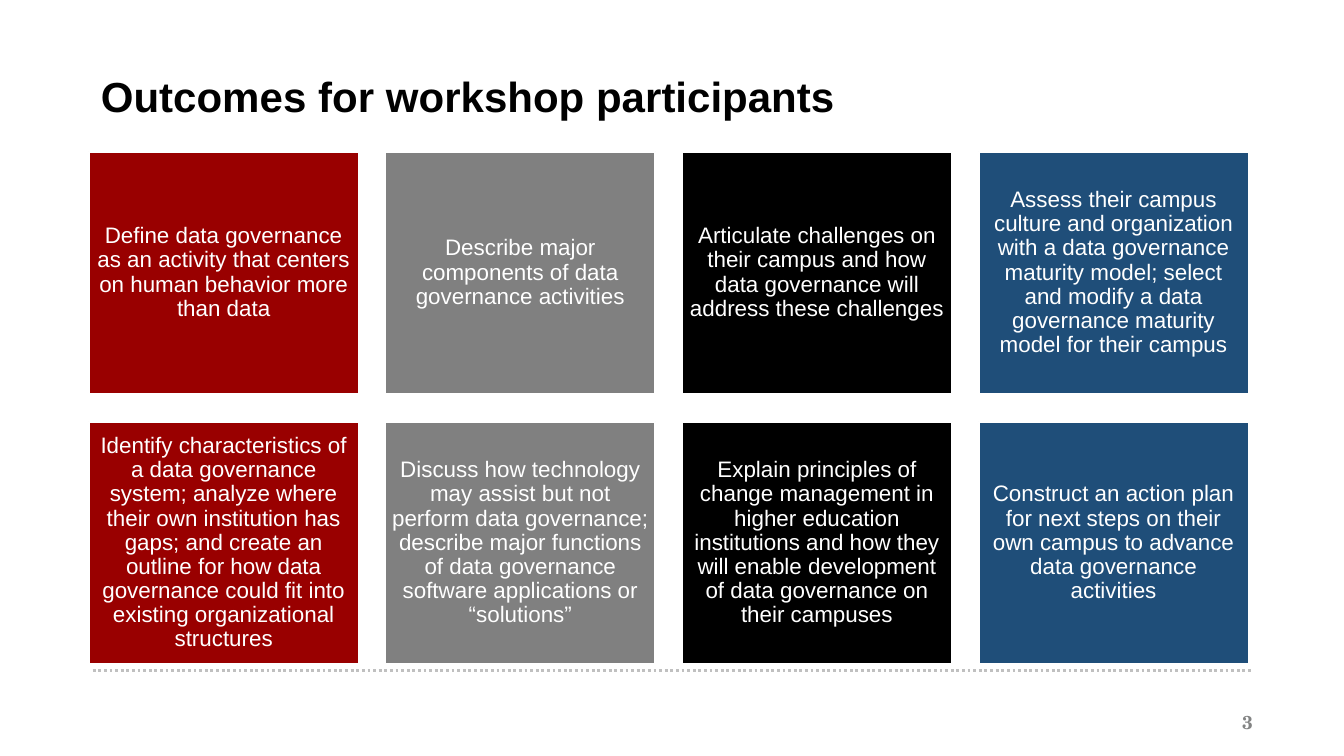
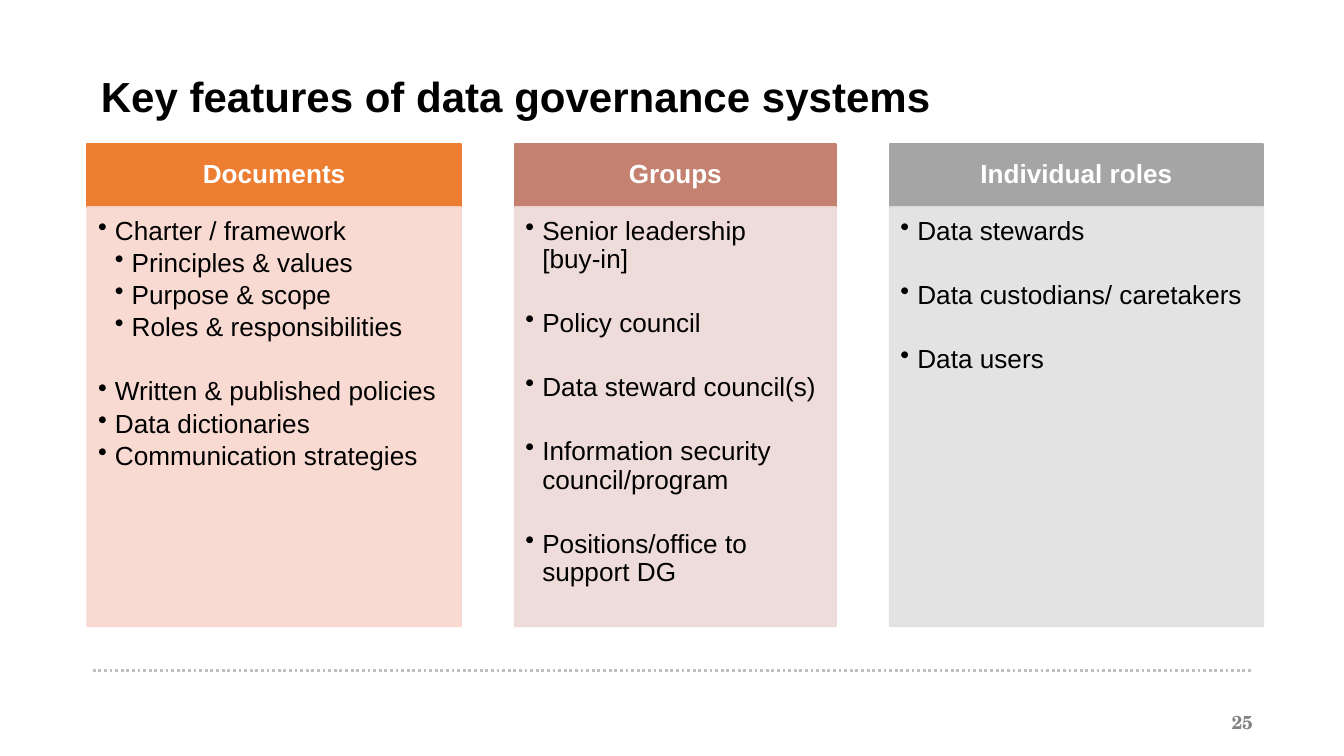
from copy import deepcopy

from lxml import etree
from pptx import Presentation
from pptx import util as u
from pptx.dml.color import RGBColor
from pptx.enum import dml, shapes, text
from pptx.oxml.ns import qn

UNIT = u.Inches(0.1)  # one column or row of the page grid
PAGE_COLUMNS, PAGE_ROWS = 100, 56.25
LEFT = 6.5
SANS, SERIF = "Arial", "TeX Gyre Schola"
BLACK, WHITE, RULE, NUMBER = "000000", "FFFFFF", "C0C0C0", "828383"
TILE_COLORS = ["990000", "808080", "000000", "1F4E79"]
LIST_SPACE = 2.1
LIST_GAP = 19.2
INDENT = 0.125

OUTCOMES = [
    ["Define data governance as an activity that centers on human behavior more than data",
     "Describe major components of data governance activities",
     "Articulate challenges on their campus and how data governance will address these challenges",
     "Assess their campus culture and organization with a data governance maturity model; "
     "select and modify a data governance maturity model for their campus"],
    ["Identify characteristics of a data governance system; analyze where their own institution "
     "has gaps; and create an outline for how data governance could fit into existing "
     "organizational structures",
     "Discuss how technology may assist but not perform data governance; describe major "
     "functions of data governance software applications or “solutions”",
     "Explain principles of change management in higher education institutions and how they "
     "will enable development of data governance on their campuses",
     "Construct an action plan for next steps on their own campus to advance data governance "
     "activities"],
]

# Each feature: heading, width, heading colour, body colour, groups of (level, text)
FEATURES = [
    ("Documents", 27.8, "ED7D31", "F8D7CE", [
        [(1, "Charter / framework"), (2, "Principles & values"),
         (2, "Purpose & scope"), (2, "Roles & responsibilities")],
        [(1, "Written & published policies"), (1, "Data dictionaries"),
         (1, "Communication strategies")]]),
    ("Groups", 23.9, "C48170", "EDD9D7", [
        [(1, "Senior leadership\n[buy-in]")], [(1, "Policy council")],
        [(1, "Data steward council(s)")], [(1, "Information security council/program")],
        [(1, "Positions/office to support DG")]]),
    ("Individual roles", 27.8, "A5A5A5", "E1E1E1", [
        [(1, "Data stewards")], [(1, "Data custodians/ caretakers")], [(1, "Data users")]]),
]


def color(hex_string):
    return RGBColor.from_string(hex_string)


def grid(*lengths):
    return [round(length * UNIT) for length in lengths]


def write(paragraph, content, size=14, font=SANS, fill=BLACK, bold=False,
          align=text.PP_ALIGN.LEFT, spacing=0.9, after=0):
    """Fill a paragraph; line breaks in the content take the same format as its runs."""
    paragraph.text = content
    paragraph.alignment = align
    paragraph.line_spacing = spacing
    paragraph.space_before = u.Pt(0)
    paragraph.space_after = u.Pt(after)
    for run in paragraph.runs:
        run.font.size = u.Pt(size)
        run.font.name = font
        run.font.bold = bold
        run.font.color.rgb = color(fill)
    for line_break in paragraph._p.findall(qn("a:br")):
        line_break.append(deepcopy(paragraph.runs[0]._r.find(qn("a:rPr"))))


def set_frame(shape, anchor, insets=(0.1, 0.05, 0.1, 0.05)):
    frame = shape.text_frame
    frame.word_wrap = True
    frame.auto_size = text.MSO_AUTO_SIZE.NONE
    frame.vertical_anchor = anchor
    (frame.margin_left, frame.margin_top,
     frame.margin_right, frame.margin_bottom) = map(u.Inches, insets)
    return frame


def add_block(slide, place, fill, line, opacity=100):
    shape = slide.shapes.add_shape(shapes.MSO_SHAPE.RECTANGLE, *grid(*place))
    shape.shadow.inherit = False
    shape.fill.solid()
    shape.fill.fore_color.rgb = color(fill)
    shape.line.color.rgb = color(line)
    shape.line.width = u.Pt(1)
    if opacity < 100:
        for value in shape._element.spPr.iter(qn("a:srgbClr")):
            etree.SubElement(value, qn("a:alpha"), val=str(opacity * 1000))
    return shape


def add_label(slide, place, content, fill, line, insets, **style):
    shape = add_block(slide, place, fill, line)
    frame = set_frame(shape, text.MSO_ANCHOR.MIDDLE, insets)
    write(frame.paragraphs[0], content, fill=WHITE, align=text.PP_ALIGN.CENTER, **style)


def set_bullet(paragraph, level):
    paragraph.level = level
    properties = paragraph._p.get_or_add_pPr()
    properties.set("marL", str(u.Inches(INDENT * level)))
    properties.set("indent", str(-u.Inches(INDENT)))
    etree.SubElement(properties, qn("a:buChar"), char="•")


def add_list(slide, place, groups, fill):
    shape = add_block(slide, place, fill, fill, opacity=90)
    frame = set_frame(shape, text.MSO_ANCHOR.TOP, (0.08, 0.08, 0.11, 0.12))
    paragraph = frame.paragraphs[0]
    for group_index, group in enumerate(groups):
        for index, (level, content) in enumerate(group):
            if group_index or index:
                paragraph = frame.add_paragraph()
            set_bullet(paragraph, level)
            ends_group = index == len(group) - 1
            write(paragraph, content, after=LIST_GAP if ends_group else LIST_SPACE)
    paragraph.space_after = u.Pt(LIST_SPACE)


def add_footer(slide, number):
    start_x, end_x, y = grid(6.9, 93.2, 49.9)
    rule = slide.shapes.add_connector(shapes.MSO_CONNECTOR.STRAIGHT, start_x, y, end_x, y)
    rule.line.color.rgb = color(RULE)
    rule.line.width = u.Pt(1.5)
    rule.line.dash_style = dml.MSO_LINE.ROUND_DOT
    etree.SubElement(rule._element.spPr, qn("a:effectLst"))
    box = slide.shapes.add_textbox(*grid(71.7, 52.2, 22.5, 3))
    frame = set_frame(box, text.MSO_ANCHOR.MIDDLE)
    write(frame.paragraphs[0], str(number), size=10, font=SERIF, fill=NUMBER,
          bold=True, align=text.PP_ALIGN.RIGHT, spacing=1.0)


def add_slide(presentation, title, number):
    slide = presentation.slides.add_slide(presentation.slide_layouts[5])
    add_footer(slide, number)
    shape = slide.shapes.title
    shape.left, shape.top, shape.width, shape.height = grid(LEFT, 5.5, 87.4, 6.7)
    frame = set_frame(shape, text.MSO_ANCHOR.TOP)
    write(frame.paragraphs[0], title, size=22.5, bold=True, spacing=0.8)
    return slide


def add_outcomes(slide):
    for row, outcomes in enumerate(OUTCOMES):
        for column, outcome in enumerate(outcomes):
            place = (6.6 + 22.07 * column, 11.3 + 20.1 * row, 20.1, 18)
            add_label(slide, place, outcome, TILE_COLORS[column], WHITE, [0.05] * 4, size=12)


def add_features(slide):
    left, top, heading_height, body_height, gap = LEFT, 10.7, 4.7, 31.2, 4
    for heading, width, strong, pale, groups in FEATURES:
        add_label(slide, (left, top, width, heading_height), heading, strong, strong,
                  (0.11, 0.06, 0.11, 0.06), bold=True)
        add_list(slide, (left, top + heading_height, width, body_height), groups, pale)
        left += width + gap


def main():
    presentation = Presentation()
    presentation.slide_width, presentation.slide_height = grid(PAGE_COLUMNS, PAGE_ROWS)
    add_outcomes(add_slide(presentation, "Outcomes for workshop participants", 3))
    add_features(add_slide(presentation, "Key features of data governance systems", 25))
    presentation.save("out.pptx")


if __name__ == "__main__":
    main()
